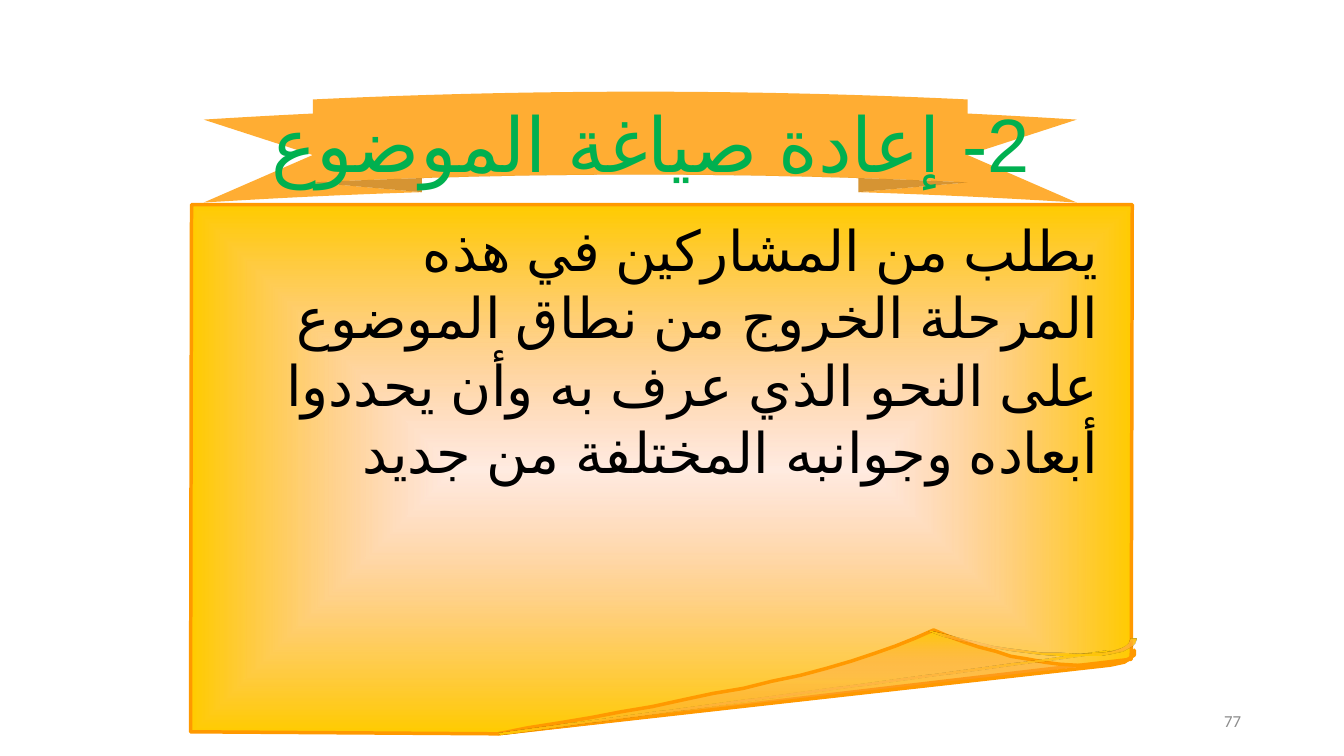
from dataclasses import dataclass

from lxml import etree
from pptx import Presentation
from pptx import util as u
from pptx.dml.color import RGBColor
from pptx.enum import lang, shapes, text
from pptx.oxml import ns

SCALE = 9144

PAGE = [(494, 728), (189, 726), (190, 203), (1123, 203), (1122, 654)]
CURL = [
    (494, 728), (1101, 660), (1115, 657), (1121, 653), (1125, 649), (1125, 645),
    (1125, 650), (1119, 654), (1109, 658), (1099, 659), (1087, 661), (1067, 660),
    (1051, 659), (1036, 657), (1020, 654), (1002, 651), (987, 646), (971, 642),
    (956, 637), (940, 631), (926, 625), (908, 633), (888, 641), (868, 648),
    (844, 656), (820, 663), (794, 670), (765, 676), (737, 683), (707, 688),
    (679, 694), (647, 701), (617, 706), (586, 712), (556, 717), (524, 722),
]
EDGE = [(1099, 646), (495, 727), (497, 729), (1101, 648)]
LIP = [
    (1127, 634), (1121, 634), (1119, 639), (1115, 642), (1105, 645), (1099, 646),
    (1101, 648), (1115, 645), (1123, 641), (1125, 638),
]
FOLD = [
    (925, 627), (921, 627), (935, 632), (951, 636), (967, 639), (983, 642),
    (1000, 645), (1016, 647), (1034, 649), (1050, 650), (1072, 650), (1091, 650),
    (1103, 648), (1113, 646), (1121, 642), (1125, 639), (1127, 634), (1121, 634),
    (1119, 638), (1115, 641), (1109, 644), (1101, 646), (1091, 647), (1072, 648),
    (1050, 647), (1034, 647), (1018, 645), (1002, 643), (987, 641), (969, 637),
    (955, 634), (939, 630),
]


@dataclass(frozen=True)
class Theme:
    """Colours, fonts and type sizes of the slide."""
    paper: str = "FFCC00"
    glow: str = "FF9966"
    accent: str = "FF9900"
    heading: str = "00B050"
    ink: str = "000000"
    muted: str = "8C8C8C"
    font: str = "Arial"
    number_font: str = "Calibri"
    title_size: int = 54
    body_size: int = 40
    number_size: int = 12
    outline: float = 2.5


def px(n):
    """Turn px into EMU."""
    return u.Emu(n * SCALE)


def add_alpha(color, percent):
    """Make a colour element partly transparent."""
    etree.SubElement(color, ns.qn("a:alpha"), val=str(percent * 1000))


def write(tf, words, *, size, color, font, align, rtl=False, wrap=True,
          anchor=text.MSO_ANCHOR.TOP):
    """Fill a text frame with one formatted paragraph."""
    tf.word_wrap = wrap
    tf.auto_size = text.MSO_AUTO_SIZE.NONE
    tf.vertical_anchor = anchor
    p = tf.paragraphs[0]
    p.alignment = align
    r = p.add_run()
    r.text = words
    r.font.size = u.Pt(size)
    r.font.name = font
    r.font.color.rgb = RGBColor.from_string(color)
    if rtl:
        p._p.get_or_add_pPr().set("rtl", "1")
        r.font.language_id = lang.MSO_LANGUAGE_ID.ARABIC
        etree.SubElement(r._r.get_or_add_rPr(), ns.qn("a:cs"), typeface=font)


class Deck:
    """Hold the style and the current slide."""

    def __init__(self, theme):
        """Open a presentation with one title-only slide."""
        self.theme = theme
        self.prs = Presentation()
        self.prs.slide_width, self.prs.slide_height = px(1333), px(750)
        self.slide = self.prs.slides.add_slide(self.prs.slide_layouts[5])

    def paper(self, points, outlined=False):
        """Draw a closed outline with the glowing paper fill."""
        t = self.theme
        fb = self.slide.shapes.build_freeform(*points[0], scale=SCALE)
        fb.add_line_segments(points[1:], close=True)
        s = fb.convert_to_shape()
        s.shadow.inherit = False
        s.fill.gradient()
        for stop, color in zip(s.fill.gradient_stops, (t.glow, t.paper)):
            stop.color.rgb = RGBColor.from_string(color)
        grad = s._element.spPr.find(ns.qn("a:gradFill"))
        add_alpha(grad.find(".//" + ns.qn("a:srgbClr")), 19)
        grad.remove(grad.find(ns.qn("a:lin")))
        way = etree.SubElement(grad, ns.qn("a:path"), path="rect")
        etree.SubElement(way, ns.qn("a:fillToRect"),
                         dict.fromkeys("ltrb", "50000"))
        if outlined:
            s.line.color.rgb = RGBColor.from_string(t.accent)
            s.line.width = u.Pt(t.outline)
        else:
            s.line.fill.background()

    def ribbon(self, x, y, w, h):
        """Draw the curved banner."""
        s = self.slide.shapes.add_shape(
            shapes.MSO_SHAPE.CURVED_UP_RIBBON, px(x), px(y), px(w), px(h))
        for i, value in enumerate((0.252, 0.75, 0.125)):
            s.adjustments[i] = value
        s.shadow.inherit = False
        s.fill.solid()
        s.fill.fore_color.rgb = RGBColor.from_string(self.theme.accent)
        add_alpha(s._element.spPr.find(".//" + ns.qn("a:srgbClr")), 80)
        s.line.fill.background()

    def title(self, words, x, y, w, h, **style):
        """Place the title in front of the shapes drawn so far."""
        s = self.slide.shapes.title
        s.left, s.top, s.width, s.height = px(x), px(y), px(w), px(h)
        self.slide.shapes._spTree.append(s._element)
        write(s.text_frame, words, **style)

    def label(self, words, x, y, w, h, inset=10, **style):
        """Add a text box."""
        s = self.slide.shapes.add_textbox(px(x), px(y), px(w), px(h))
        s.text_frame.margin_left = px(inset)
        write(s.text_frame, words, **style)


def main():
    """Build and save the slide."""
    t = Theme()
    deck = Deck(t)
    for points in (PAGE, CURL):
        deck.paper(points, outlined=True)
    for points in (EDGE, LIP, FOLD):
        deck.paper(points)
    deck.label("يطلب من المشاركين في هذه المرحلة الخروج من نطاق الموضوع على النحو "
               "الذي عرف به وأن يحددوا أبعاده وجوانبه المختلفة من جديد",
               226, 209, 874, 212, inset=45, size=t.body_size, color=t.ink,
               font=t.font, align=text.PP_ALIGN.RIGHT, rtl=True)
    deck.ribbon(202, 91, 866, 110)
    deck.title("2- إعادة صياغة الموضوع ", 202, 86, 866, 110, size=t.title_size,
               color=t.heading, font=t.font, align=text.PP_ALIGN.CENTER,
               rtl=True, wrap=False, anchor=text.MSO_ANCHOR.MIDDLE)
    deck.label("77", 941, 695, 300, 40, size=t.number_size, color=t.muted,
               font=t.number_font, align=text.PP_ALIGN.RIGHT,
               anchor=text.MSO_ANCHOR.MIDDLE)
    deck.prs.save("out.pptx")


if __name__ == "__main__":
    main()
